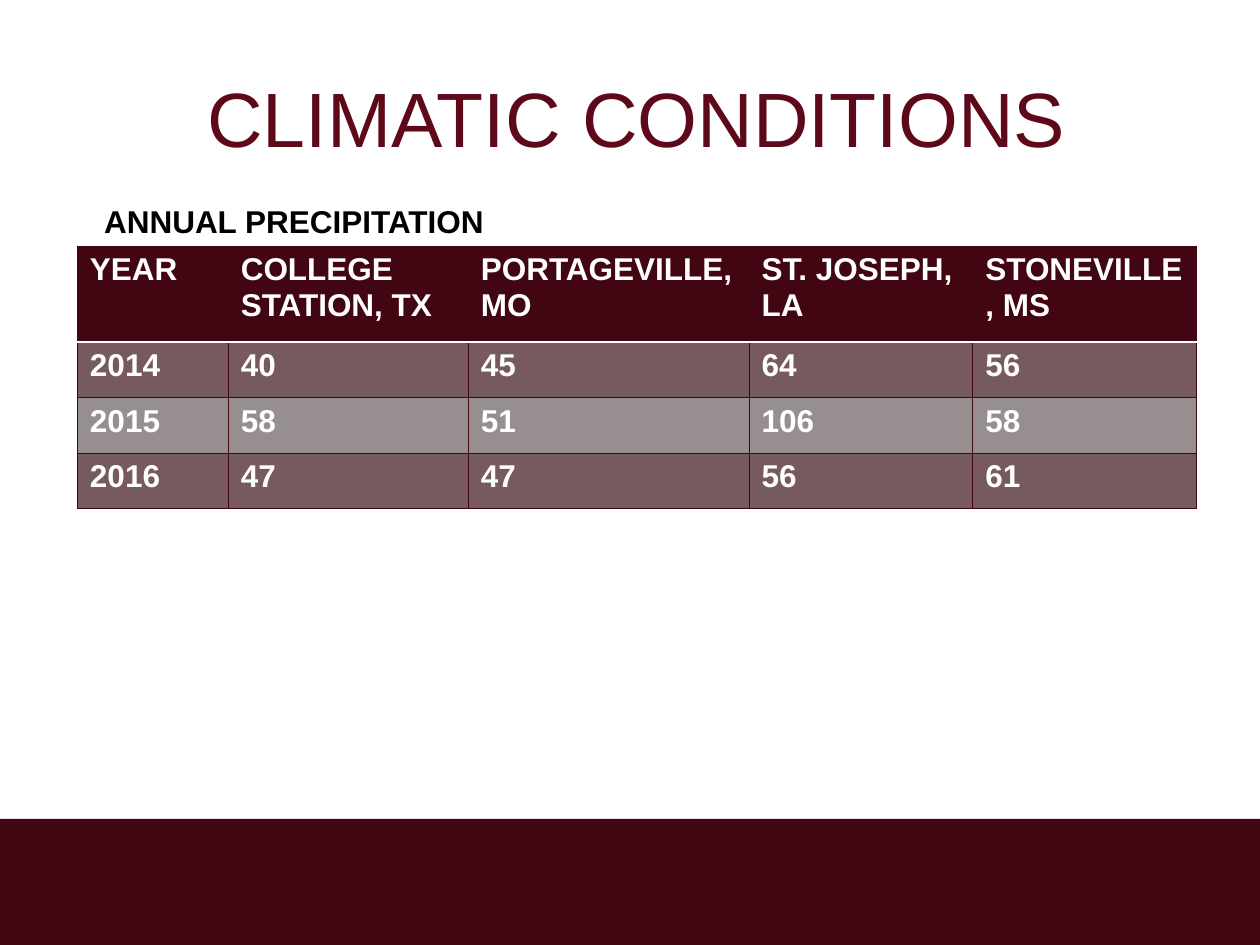
from lxml.etree import SubElement
from pptx import Presentation
from pptx.dml.color import RGBColor
from pptx.enum.shapes import MSO_SHAPE as Shape
from pptx.enum.text import MSO_ANCHOR as Anchor, MSO_AUTO_SIZE as AutoSize, PP_ALIGN as Align
from pptx.oxml.ns import qn
from pptx.util import Cm, Pt

COLORS = {
    "maroon": "410611", "title": "5E091A", "band": "775A5E",
    "plain": "978F8F", "white": "FFFFFF", "black": "000000",
}
HEADER = ["YEAR", "COLLEGE STATION, TX", "PORTAGEVILLE, MO", "ST. JOSEPH, LA", "STONEVILLE, MS"]
RAINFALL = [
    [2014, 40, 45, 64, 56],
    [2015, 58, 51, 106, 58],
    [2016, 47, 47, 56, 61],
]
COLUMN_WIDTHS = [3.04, 4.84, 5.66, 4.51, 4.51]
ROW_HEIGHTS = [1.93] + [1.12] * len(RAINFALL)


def color(name):
    """Return the named palette colour."""
    return RGBColor.from_string(COLORS[name])


def write(frame, text, size, tint, bold=False, align=Align.LEFT):
    """Put one formatted paragraph into a text frame."""
    para = frame.paragraphs[0]
    para.alignment = align
    span = para.add_run()
    span.text = text
    for key, value in {"name": "Arial", "size": Pt(size), "bold": bold}.items():
        setattr(span.font, key, value)
    span.font.color.rgb = color(tint)


def set_borders(cell, bottom=("maroon", 0.5)):
    """Draw the four cell borders, with a chosen bottom edge."""
    props = cell._tc.get_or_add_tcPr()
    edges = dict.fromkeys(["lnL", "lnR", "lnT"], ("maroon", 0.5)) | {"lnB": bottom}
    for tag, (tint, width) in edges.items():
        line = SubElement(props, qn(f"a:{tag}"), w=str(Pt(width)))
        fill = SubElement(line, qn("a:solidFill"))
        SubElement(fill, qn("a:srgbClr"), val=COLORS[tint])


def add_footer(page, left, top, width, height):
    """Add the solid bar along the foot of the page."""
    bar = page.shapes.add_shape(Shape.RECTANGLE, left, top, width, height)
    bar.shadow.inherit = False
    bar.fill.solid()
    bar.fill.fore_color.rgb = color("maroon")
    bar.line.fill.background()


def add_title(page, left, top, width, height):
    """Place and format the title placeholder."""
    title = page.shapes.title
    for key, value in {"left": left, "top": top, "width": width, "height": height}.items():
        setattr(title, key, value)
    title.text_frame.vertical_anchor = Anchor.MIDDLE
    write(title.text_frame, "CLIMATIC CONDITIONS", 44, "title", align=Align.CENTER)


def add_precipitation(page, left, top, caption_height):
    """Add the precipitation caption with its table below."""
    table_top = top + caption_height
    frame = page.shapes.add_table(len(ROW_HEIGHTS), len(COLUMN_WIDTHS), left, table_top,
                                  Cm(sum(COLUMN_WIDTHS)), Cm(sum(ROW_HEIGHTS)))
    table = frame.table
    table.horz_banding = False
    for column, width in zip(table.columns, COLUMN_WIDTHS):
        column.width = Cm(width)
    for row, height in zip(table.rows, ROW_HEIGHTS):
        row.height = Cm(height)
    for index, values in enumerate([HEADER] + RAINFALL):
        fill = "maroon" if index == 0 else "band" if index % 2 else "plain"
        for cell, value in zip(table.rows[index].cells, values):
            write(cell.text_frame, str(value), 18, "white", bold=True)
            if index == 0:
                set_borders(cell, bottom=("white", 1))
            elif index == 1:
                set_borders(cell)
                cell._tc.tcPr.find(qn("a:lnT")).set("w", str(Pt(1)))
                cell._tc.tcPr.find(qn("a:lnT")).find(".//" + qn("a:srgbClr")).set("val", COLORS["white"])
            else:
                set_borders(cell)
            cell.fill.solid()
            cell.fill.fore_color.rgb = color(fill)

    caption = page.shapes.add_textbox(left + Cm(0.29), top, Cm(8.43), caption_height)
    caption.text_frame.word_wrap = False
    caption.text_frame.auto_size = AutoSize.SHAPE_TO_FIT_TEXT
    write(caption.text_frame, "ANNUAL PRECIPITATION", 18, "black", bold=True)


def main():
    """Build the slide and save the deck."""
    deck = Presentation()
    deck.slide_width, deck.slide_height = Cm(25.4), Cm(19.05)
    page = deck.slides.add_slide(deck.slide_layouts[5])
    add_footer(page, Cm(0), Cm(16.51), deck.slide_width, Cm(2.54))
    add_title(page, Cm(1.56), Cm(0.76), Cm(22.56), Cm(3.18))
    add_precipitation(page, Cm(1.56), Cm(3.94), Cm(1.02))
    deck.save("out.pptx")


if __name__ == "__main__":
    main()
